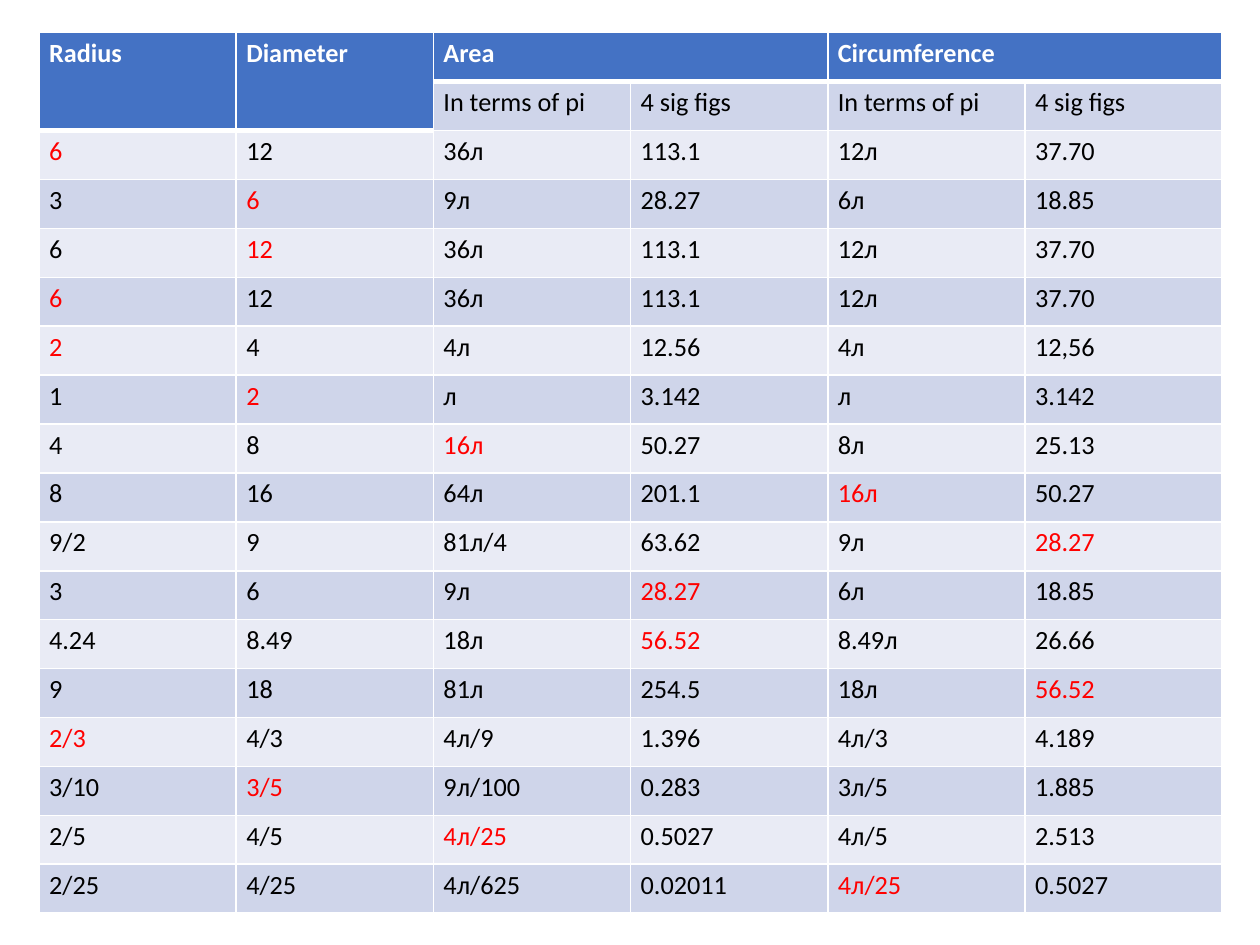
import pptx
import pptx.dml.color
import pptx.oxml
import pptx.oxml.ns
import pptx.util

Inches = pptx.util.Inches
RGBColor = pptx.dml.color.RGBColor

WHITE = RGBColor(0xFF, 0xFF, 0xFF)
BLACK = RGBColor(0x00, 0x00, 0x00)
RED = RGBColor(0xFF, 0x00, 0x00)
BLUE = RGBColor(0x44, 0x72, 0xC4)
DARK = RGBColor(0xCF, 0xD5, 0xEA)
LIGHT = RGBColor(0xE9, 0xEB, 0xF5)

HEADS = {0: "Radius", 1: "Diameter", 2: "Area", 4: "Circumference"}
UNITS = ["", ""] + ["In terms of pi", "4 sig figs"] * 2
ROWS = [
    (0, "6 12 36л 113.1 12л 37.70"),
    (1, "3 6 9л 28.27 6л 18.85"),
    (1, "6 12 36л 113.1 12л 37.70"),
    (0, "6 12 36л 113.1 12л 37.70"),
    (0, "2 4 4л 12.56 4л 12,56"),
    (1, "1 2 л 3.142 л 3.142"),
    (2, "4 8 16л 50.27 8л 25.13"),
    (4, "8 16 64л 201.1 16л 50.27"),
    (5, "9/2 9 81л/4 63.62 9л 28.27"),
    (3, "3 6 9л 28.27 6л 18.85"),
    (3, "4.24 8.49 18л 56.52 8.49л 26.66"),
    (5, "9 18 81л 254.5 18л 56.52"),
    (0, "2/3 4/3 4л/9 1.396 4л/3 4.189"),
    (1, "3/10 3/5 9л/100 0.283 3л/5 1.885"),
    (2, "2/5 4/5 4л/25 0.5027 4л/5 2.513"),
    (4, "2/25 4/25 4л/625 0.02011 4л/25 0.5027"),
]


class Sheet:
    """Draws styled table parts on one slide."""

    def __init__(self, slide, font, size):
        self.slide = slide
        self.font = font
        self.size = pptx.util.Pt(size)

    def table(self, rows, cols, left, top, width, height):
        frame = self.slide.shapes.add_table(
            rows, cols, Inches(left), Inches(top), Inches(width), Inches(height))
        grid = frame.table
        grid.first_row = grid.horz_banding = False
        for col in grid.columns:
            col.width = Inches(width / cols)
        for row in grid.rows:
            row.height = Inches(height / rows)
        return grid

    def edge(self, cell, side, width):
        line = pptx.oxml.parse_xml(
            f'<a:ln{side} {pptx.oxml.ns.nsdecls("a")} w="{pptx.util.Pt(width)}">'
            f'<a:solidFill><a:srgbClr val="{WHITE}"/></a:solidFill></a:ln{side}>')
        cell._tc.get_or_add_tcPr().append(line)

    def cell(self, cell, text, fill, color, bold=False, above=1, below=1):
        cell.margin_left = cell.margin_right = Inches(0.08)
        cell.margin_top = cell.margin_bottom = Inches(0.04)
        for side, width in zip("LRTB", (1, 1, above, below)):
            self.edge(cell, side, width)
        cell.fill.solid()
        cell.fill.fore_color.rgb = fill
        if text:
            run = cell.text_frame.paragraphs[0].add_run()
            run.text = text
            run.font.name = self.font
            run.font.size = self.size
            run.font.bold = bold
            run.font.color.rgb = color


def main():
    deck = pptx.Presentation()
    deck.slide_width, deck.slide_height = Inches(10), Inches(7.5)
    sheet = Sheet(deck.slides.add_slide(deck.slide_layouts[6]), "Calibri", 15)
    grid = sheet.table(len(ROWS) + 2, 6, 0.31, 0.26, 9.39, 6.99)

    for col, unit in enumerate(UNITS):
        sheet.cell(grid.cell(0, col), HEADS.get(col), BLUE, WHITE, True, below=3)
        if unit:
            sheet.cell(grid.cell(1, col), unit, DARK, BLACK, above=3)
        else:
            sheet.cell(grid.cell(1, col), unit, BLUE, WHITE, below=3)
    for col in (0, 1):
        grid.cell(0, col).merge(grid.cell(1, col))
    for col in (2, 4):
        grid.cell(0, col).merge(grid.cell(0, col + 1))

    for row, (given, values) in enumerate(ROWS, 2):
        fill = DARK if row % 2 else LIGHT
        for col, text in enumerate(values.split()):
            color = RED if col == given else BLACK
            above = 3 if row == 2 and col < 2 else 1
            sheet.cell(grid.cell(row, col), text, fill, color, above=above)
    deck.save("out.pptx")


if __name__ == "__main__":
    main()
